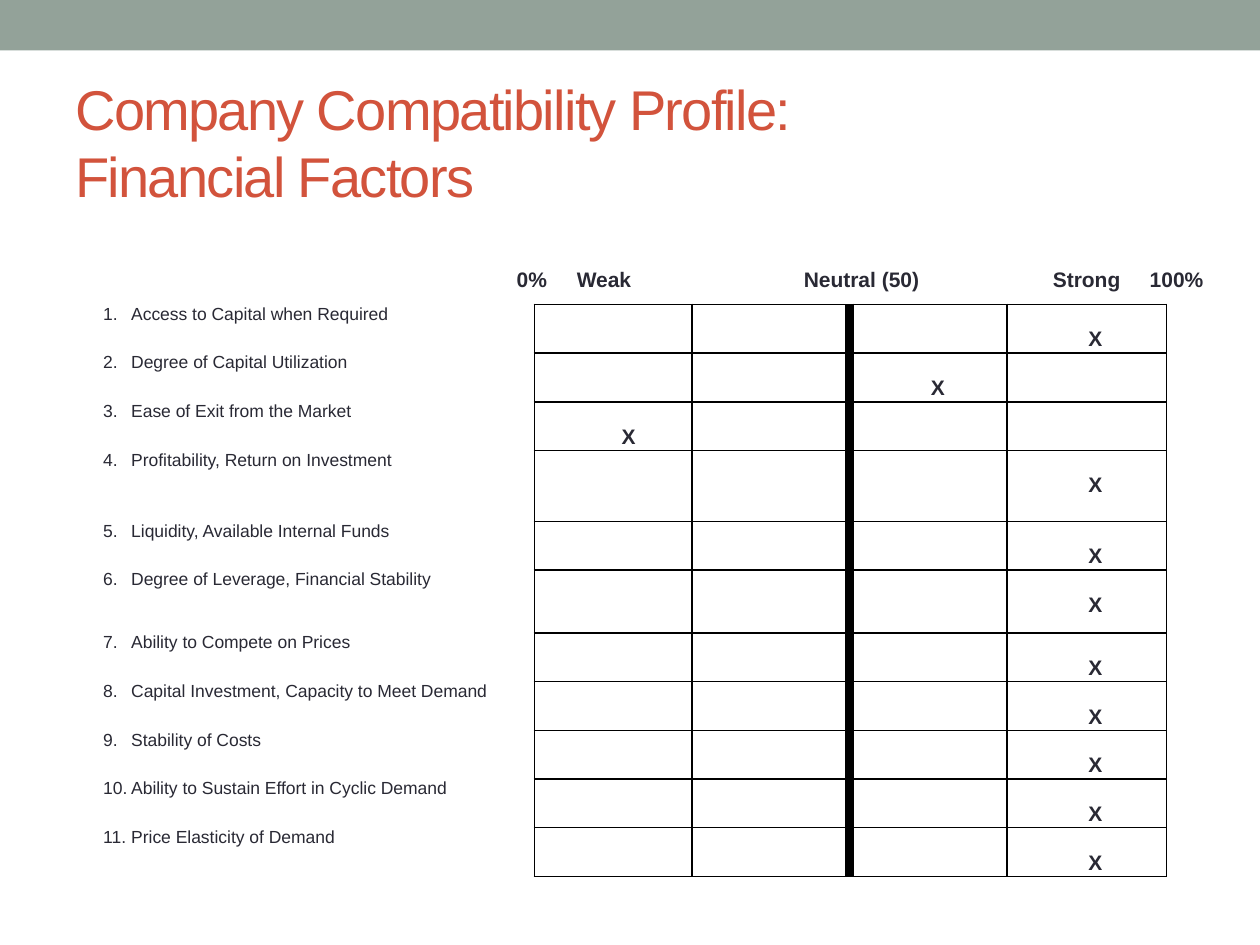
from lxml.etree import SubElement
from pptx import Presentation
from pptx.dml.color import RGBColor
from pptx.enum.shapes import MSO_SHAPE
from pptx.enum.text import MSO_ANCHOR
from pptx.oxml.ns import qn
from pptx.util import Pt

SAGE = RGBColor(0x93, 0xA2, 0x99)
RUST = RGBColor(0xD2, 0x53, 0x3C)
INK = RGBColor(0x29, 0x29, 0x34)
BLACK = RGBColor(0, 0, 0)

TITLE = "Company Compatibility Profile:\nFinancial Factors"
# scale label, tab stop
SCALE = [("0%", 252.2), ("Weak", 286.5), ("Neutral (50)", 416.2),
         ("Strong", 558.5), ("100%", 613.9)]
WEAK, FAIR, GOOD, STRONG = 1, 2, 3, 4
ROW = 26.85
# factor, rating column, row height
FACTORS = [
    ("Access to Capital when Required", STRONG, ROW),
    ("Degree of Capital Utilization", GOOD, ROW),
    ("Ease of Exit from the Market", WEAK, ROW),
    ("Profitability, Return on Investment", STRONG, 40.5),
    ("Liquidity, Available Internal Funds", STRONG, ROW),
    ("Degree of Leverage, Financial Stability", STRONG, 36),
    ("Ability to Compete on Prices", STRONG, ROW),
    ("Capital Investment, Capacity to Meet Demand", STRONG, ROW),
    ("Stability of Costs", STRONG, ROW),
    ("Ability to Sustain Effort in Cyclic Demand", STRONG, ROW),
    ("Price Elasticity of Demand", STRONG, ROW),
]
COLS = [251.3, 90, 90, 90, 91.4]
INSET = {WEAK: 45, GOOD: 41.7, STRONG: 41.7}


def put(frame, text, size=12, color=INK, bold=False, tabs=(), lead=None, track=0):
    para = frame.paragraphs[0]
    para.font.size = Pt(size)
    if lead:
        para.line_spacing = Pt(lead)
    if tabs:
        stops = SubElement(para._p.get_or_add_pPr(), qn("a:tabLst"))
        for stop in tabs:
            SubElement(stops, qn("a:tab"), pos=str(Pt(stop)), algn="l")
        # default run properties come after tab stops in the schema
        props = para._p.pPr
        props.append(props.find(qn("a:defRPr")))
    for i, line in enumerate(text.split("\n")):
        if i:
            para.add_line_break()
        run = para.add_run()
        run.text = line
        font = run.font
        font.name, font.size, font.bold = "Arial", Pt(size), bold
        font.color.rgb = color
        if track:
            font._element.set("spc", str(track * 100))


def box(slide, left, top, width, height):
    frame = slide.shapes.add_textbox(Pt(left), Pt(top), Pt(width), Pt(height)).text_frame
    frame.word_wrap = True
    frame.vertical_anchor = MSO_ANCHOR.MIDDLE
    return frame


def edge(cell, col):
    """Set the cell's borders; a heavy bar marks the neutral line."""
    props = cell._tc.get_or_add_tcPr()
    for side in "LRTB":
        heavy = (col, side) in ((FAIR, "R"), (GOOD, "L"))
        line = SubElement(props, qn("a:ln" + side), w=str(Pt(6 if heavy else 1)))
        if col == 0 and side != "R":
            SubElement(line, qn("a:noFill"))
        else:
            fill = SubElement(line, qn("a:solidFill"))
            SubElement(fill, qn("a:srgbClr"), val=str(BLACK))


def chart(slide):
    """Draw the rating grid with its numbered factors."""
    height = sum(row[2] for row in FACTORS)
    table = slide.shapes.add_table(len(FACTORS), len(COLS), Pt(54), Pt(174),
                                   Pt(sum(COLS)), Pt(height)).table
    table.first_row = table.horz_banding = False
    for col, width in zip(table.columns, COLS):
        col.width = Pt(width)
    for r, (name, mark, high) in enumerate(FACTORS):
        table.rows[r].height = Pt(high)
        for c in range(len(COLS)):
            cell = table.cell(r, c)
            cell.margin_left = cell.margin_right = Pt(5)
            cell.margin_top = cell.margin_bottom = 0
            edge(cell, c)
            cell.fill.background()
            if c == 0:
                put(cell.text_frame, f"{r + 1}.\t{name}", size=10, tabs=[16])
            elif c == mark:
                cell.margin_left = Pt(5 + INSET[mark] - 5 + 5)
                cell.margin_top = Pt(13.4)
                put(cell.text_frame, "X", bold=True)
            else:
                put(cell.text_frame, "")


def main():
    deck = Presentation()
    deck.slide_width, deck.slide_height = Pt(720), Pt(540)
    slide = deck.slides.add_slide(deck.slide_layouts[6])

    band = slide.shapes.add_shape(MSO_SHAPE.RECTANGLE, 0, 0, Pt(720), Pt(28.8))
    band.shadow.inherit = False
    band.fill.solid()
    band.fill.fore_color.rgb = SAGE
    band.line.fill.background()

    put(box(slide, 36, 42, 648, 77.5), TITLE, size=32, color=RUST, lead=38.3, track=-1)
    chart(slide)
    put(box(slide, 36, 148.5, 671, 21.5), "".join("\t" + name for name, _ in SCALE),
        bold=True, tabs=[stop for _, stop in SCALE])
    deck.save("out.pptx")


if __name__ == "__main__":
    main()
